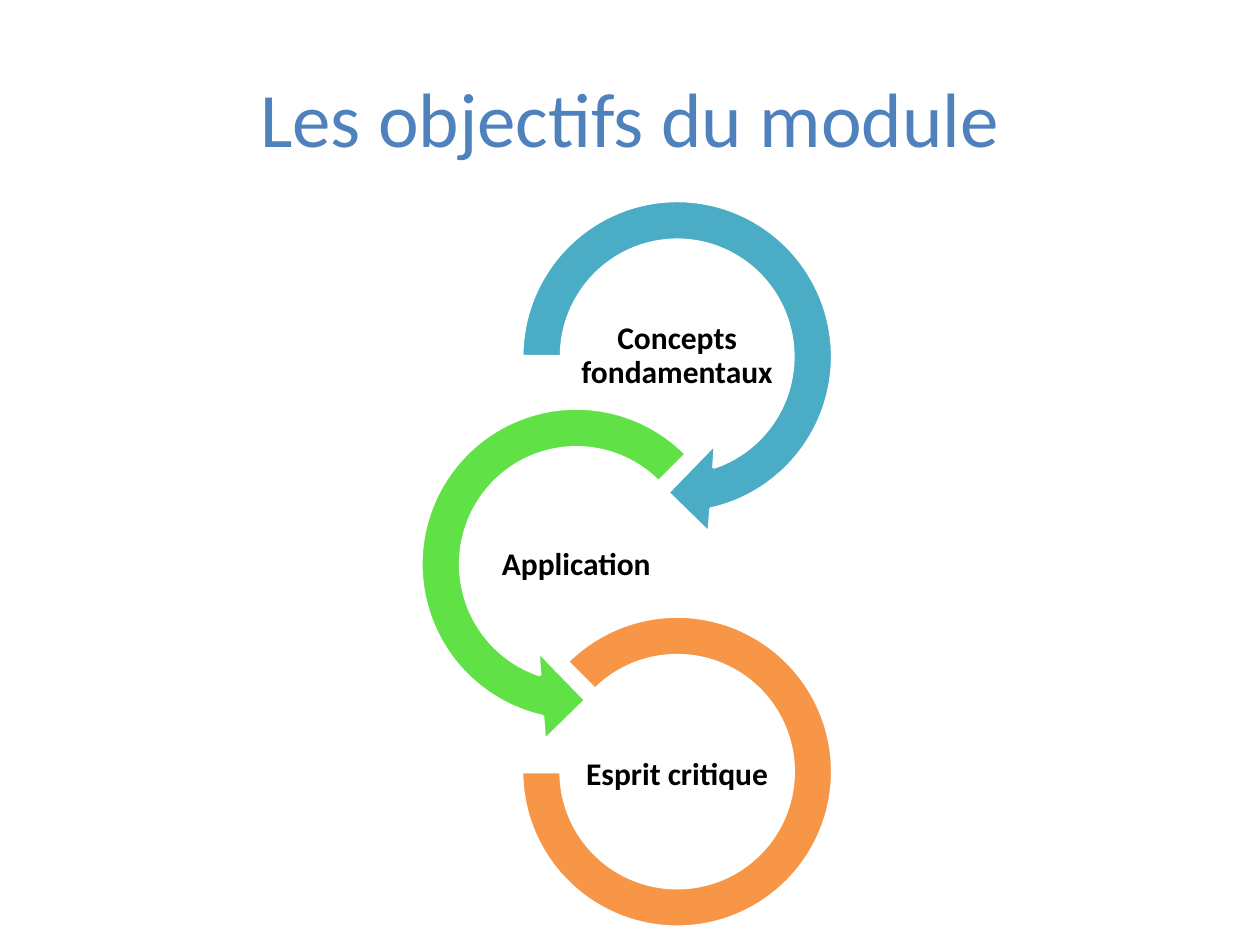
from dataclasses import dataclass

from pptx import Presentation
from pptx.dml.color import RGBColor
from pptx.enum.shapes import MSO_SHAPE
from pptx.enum.text import MSO_ANCHOR, PP_ALIGN
from pptx.util import Pt

MIDDLE = MSO_ANCHOR.MIDDLE
CENTER = PP_ALIGN.CENTER
TITLE_ONLY = 5


@dataclass(frozen=True)
class Theme:
    font: str = "Calibri"
    title_size: float = 44
    label_size: float = 18
    outline_width: float = 2
    title: str = "4F81BD"
    label: str = "000000"
    outline: str = "FFFFFF"


@dataclass(frozen=True)
class Box:
    left: float
    top: float
    width: float
    height: float

    def lengths(self):
        return [Pt(v) for v in (self.left, self.top, self.width, self.height)]


@dataclass(frozen=True)
class Stage:
    label: str
    preset: MSO_SHAPE
    adjustments: tuple
    color: str
    width: float
    height: float
    on_right: bool


THEME = Theme()
TITLE_BOX = Box(36, 21.6, 648, 90)
CYCLE_BOX = Box(226.1, 100.1, 264.2, 430)
RING_PITCH = 118.6
LABEL_PITCH = 119.5
LABEL_WIDTH, LABEL_HEIGHT = 115.2, 57.6
ARROW_WIDTH, ARROW_HEIGHT = 206.6, 207.4
ARC_SIZE = 177.8

STAGES = (
    Stage("Concepts fondamentaux", MSO_SHAPE.CIRCULAR_ARROW,
          (0.11, 11.42, 45, 108, 0.125), "4BACC6", ARROW_WIDTH, ARROW_HEIGHT, True),
    Stage("Application", MSO_SHAPE.LEFT_CIRCULAR_ARROW,
          (0.11, 11.42, 63, 189, 0.125), "60E146", ARROW_WIDTH, ARROW_HEIGHT, False),
    Stage("Esprit critique", MSO_SHAPE.BLOCK_ARC,
          (135, 108, 0.127), "F79646", ARC_SIZE, ARC_SIZE, True),
)


def centered_box(x, y, width, height):
    return Box(x - width / 2, y - height / 2, width, height)


def format_text(frame, size, color, bold):
    frame.word_wrap = True
    frame.vertical_anchor = MIDDLE
    for para in frame.paragraphs:
        para.alignment = CENTER
        for span in para.runs:
            span.font.name = THEME.font
            span.font.size = Pt(size)
            span.font.bold = bold
            span.font.color.rgb = RGBColor.from_string(color)


def add_title(page, box, text):
    title = page.shapes.title
    title.left, title.top, title.width, title.height = box.lengths()
    title.text_frame.text = text
    format_text(title.text_frame, THEME.title_size, THEME.title, False)


def add_ring(shapes, box, stage):
    ring = shapes.add_shape(stage.preset, *box.lengths())
    for index, value in enumerate(stage.adjustments):
        ring.adjustments[index] = value
    ring.shadow.inherit = False
    ring.fill.solid()
    ring.fill.fore_color.rgb = RGBColor.from_string(stage.color)
    ring.line.color.rgb = RGBColor.from_string(THEME.outline)
    ring.line.width = Pt(THEME.outline_width)


def add_label(shapes, box, text):
    frame = shapes.add_textbox(*box.lengths()).text_frame
    frame.text = text
    frame.margin_left = frame.margin_right = Pt(1)
    frame.margin_top = frame.margin_bottom = Pt(1)
    frame.paragraphs[0].line_spacing = 0.9
    format_text(frame, THEME.label_size, THEME.label, True)


def add_cycle(page, box, stages):
    """Stack the stages down the box, alternating between its right and left side."""
    shapes = page.shapes.add_group_shape().shapes
    left_x = box.left + ARROW_WIDTH / 2
    right_x = box.left + box.width - ARROW_WIDTH / 2
    first_y = box.top + ARROW_HEIGHT / 2
    for index, stage in enumerate(stages):
        x = right_x if stage.on_right else left_x
        ring_y = first_y + index * RING_PITCH
        label_y = first_y + index * LABEL_PITCH
        add_ring(shapes, centered_box(x, ring_y, stage.width, stage.height), stage)
        add_label(shapes, centered_box(x, label_y, LABEL_WIDTH, LABEL_HEIGHT), stage.label)


def main():
    deck = Presentation()
    deck.slide_width, deck.slide_height = Pt(720), Pt(540)
    page = deck.slides.add_slide(deck.slide_layouts[TITLE_ONLY])
    add_title(page, TITLE_BOX, "Les objectifs du module")
    add_cycle(page, CYCLE_BOX, STAGES)
    deck.save("out.pptx")


if __name__ == "__main__":
    main()
